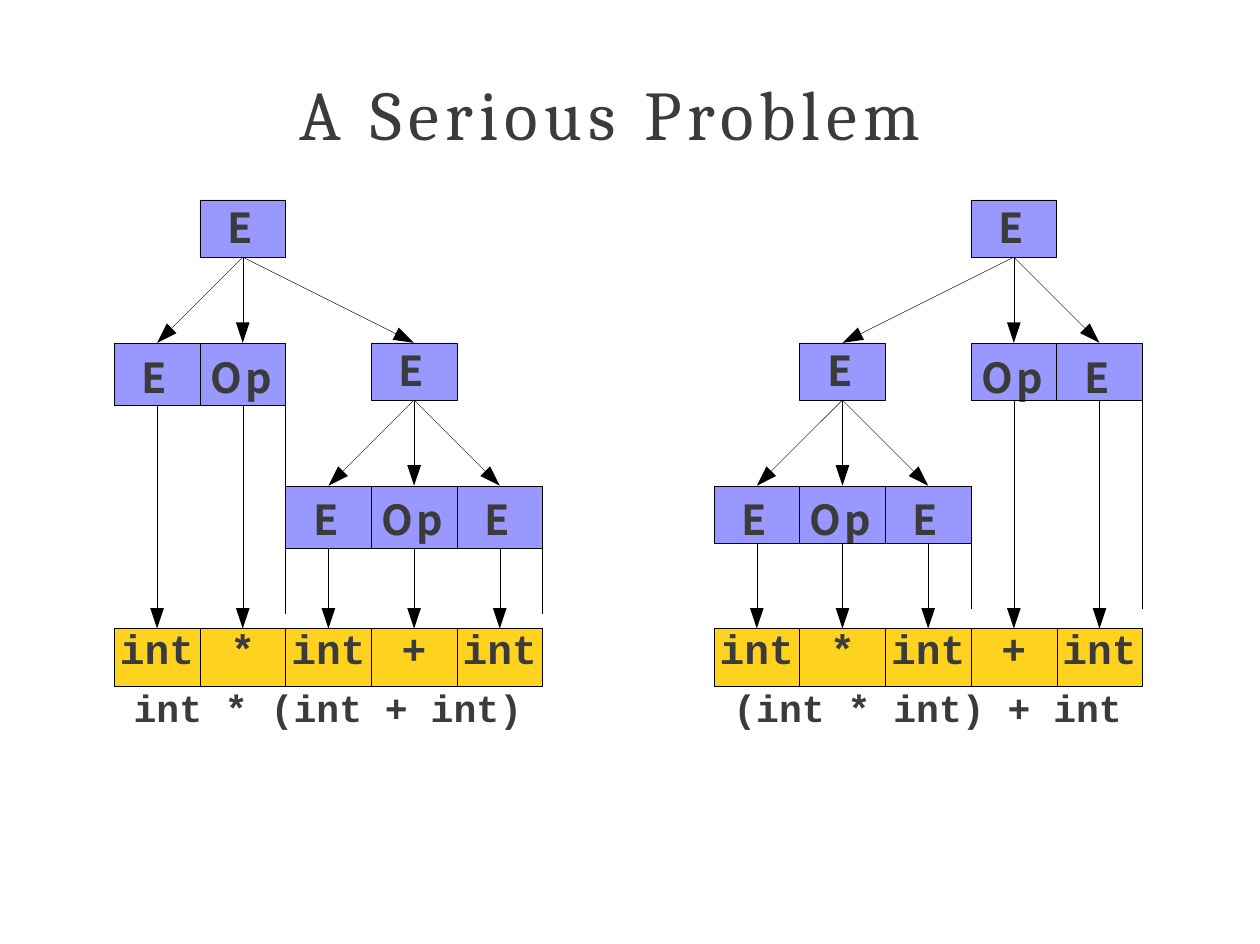
from math import hypot

from lxml.etree import SubElement
from pptx import Presentation
from pptx.dml.color import RGBColor
from pptx.enum.shapes import MSO_CONNECTOR, MSO_SHAPE
from pptx.enum.text import MSO_ANCHOR, MSO_AUTO_SIZE, PP_ALIGN
from pptx.oxml import parse_xml
from pptx.oxml.ns import nsdecls, qn
from pptx.util import Inches, Pt

TITLE = [("A ", 4.3), ("Serious ", 4), ("Problem", 3.7)]
TREES = [
    {
        "left": 1,
        "tokens": ["int", "*", "int", "+", "int"],
        "expression": "int * (int + int)",
        "nodes": [(1, 0, [0, 1, 3]), (3, 1, [2, 3, 4])],
        "groups": [(0, 1, ["E", "Op"]), (2, 2, ["E", "Op", "E"])],
    },
    {
        "left": 6.25,
        "tokens": ["int", "*", "int", "+", "int"],
        "expression": "(int * int) + int",
        "nodes": [(3, 0, [1, 3, 4]), (1, 1, [0, 1, 2])],
        "groups": [(3, 1, ["Op", "E"]), (0, 2, ["E", "Op", "E"])],
    },
]

CELL_W, CELL_H = 0.75, 0.5
TOP, LEVEL_STEP, TOKEN_LEVEL = 1.75, 1.25, 3
HEAD_LEN, HEAD_HALF, STEM_GAP = 0.18, 0.06, 0.17
BLUE, YELLOW, INK, BLACK = "9898FF", "FFD21F", "3B3B3B", "000000"
LINE_W = 0.25
INDENTS = {"E": 0.24, "Op": 0.09, "int": 0.05}
PLAIN_TABLE = "{2D5ABB26-0587-4C30-8999-92F81FD0307C}"

TITLE_FONT = {"name": "Cambria", "size": Pt(44), "bold": False}
NODE_FONT = {"name": "Noto Sans CJK KR", "size": Pt(26), "bold": True}
TOKEN_FONT = {"name": "Courier New", "size": Pt(26), "bold": True}
EXPRESSION_FONT = {"name": "Courier New", "size": Pt(24), "bold": True}


def color(fmt, value):
    fmt.rgb = RGBColor.from_string(value)


def paint(fill, value):
    fill.solid()
    color(fill.fore_color, value)


def write(tf, runs, font, indent=0, line=None):
    p = tf.paragraphs[0]
    p.alignment = PP_ALIGN.LEFT if indent else PP_ALIGN.CENTER
    p._p.get_or_add_pPr().set("marL", str(Inches(indent)))
    if line:
        p.line_spacing = Pt(line)
    for text, spacing in runs:
        r = p.add_run()
        r.text = text
        for key, value in font.items():
            setattr(r.font, key, value)
        color(r.font.color, INK)
        r.font._element.set("spc", str(round(spacing * 100)))


def inset(target, top):
    margins = {"margin_left": 0, "margin_right": 0, "margin_top": Inches(top),
               "margin_bottom": 0, "vertical_anchor": MSO_ANCHOR.TOP}
    for key, value in margins.items():
        setattr(target, key, value)


def add_text(s, runs, font, x, y, w, h):
    tf = s.shapes.add_textbox(Inches(x), Inches(y), Inches(w), Inches(h)).text_frame
    tf.word_wrap = True
    inset(tf, 0.01)
    write(tf, runs, font, 0.01)


def add_node(s, x, y):
    sp = s.shapes.add_shape(MSO_SHAPE.RECTANGLE, Inches(x), Inches(y),
                            Inches(CELL_W), Inches(CELL_H))
    sp.shadow.inherit = False
    paint(sp.fill, BLUE)
    color(sp.line.color, BLACK)
    sp.line.width = Pt(LINE_W)
    tf = sp.text_frame
    tf.word_wrap = True
    tf.auto_size = MSO_AUTO_SIZE.SHAPE_TO_FIT_TEXT
    inset(tf, 0.02)
    write(tf, [("E", 5.8)], NODE_FONT, INDENTS["E"])


def add_borders(cell, sides="LRTB"):
    tcPr = cell._tc.get_or_add_tcPr()
    for i, side in enumerate(sides):
        tcPr.insert(i, parse_xml(
            f'<a:ln{side} {nsdecls("a")} w="{Pt(LINE_W)}"><a:solidFill>'
            f'<a:srgbClr val="{BLACK}"/></a:solidFill></a:ln{side}>'))


def add_table(s, x, y, widths, heights):
    table = s.shapes.add_table(len(heights), len(widths), Inches(x), Inches(y),
                               Inches(sum(widths)), Inches(sum(heights))).table
    table.first_row = table.horz_banding = False
    table._tbl.tblPr.find(qn("a:tableStyleId")).text = PLAIN_TABLE
    for column, w in zip(table.columns, widths):
        column.width = Inches(w)
    for row, h in zip(table.rows, heights):
        row.height = Inches(h)
    return table


def fill_cell(cell, label, fill, font, top, line=None):
    inset(cell, top)
    paint(cell.fill, fill)
    add_borders(cell)
    spacing = 2.1 if label == "Op" else 0
    write(cell.text_frame, [(label, spacing)], font, INDENTS.get(label, 0), line)


def add_tokens(s, tokens, x, y):
    table = add_table(s, x, y, [CELL_W] * len(tokens), [CELL_H])
    for i, token in enumerate(tokens):
        fill_cell(table.cell(0, i), token, YELLOW, TOKEN_FONT, 0, 30.2)


def add_group(s, labels, x, y, token_y):
    last = 2 * len(labels) - 1
    table = add_table(s, x, y, [CELL_W / 2] * (last + 1),
                      [CELL_H, token_y - STEM_GAP - y - CELL_H])
    for i, label in enumerate(labels):
        cell = table.cell(0, 2 * i)
        cell.merge(table.cell(0, 2 * i + 1))
        fill_cell(cell, label, BLUE, NODE_FONT, 0.02)
    add_borders(table.cell(1, 0), "RT")
    add_borders(table.cell(1, last), "LT")
    for i in range(1, last, 2):
        table.cell(1, i).merge(table.cell(1, i + 1))
        add_borders(table.cell(1, i), "LR")


def add_head(s, x, y, ux, uy):
    bx, by = x - HEAD_LEN * ux, y - HEAD_LEN * uy
    dx, dy = -HEAD_HALF * uy, HEAD_HALF * ux
    corners = [(Inches(a), Inches(b)) for a, b in
               [(x, y), (bx + dx, by + dy), (bx - dx, by - dy)]]
    builder = s.shapes.build_freeform(*corners[0])
    builder.add_line_segments(corners[1:], close=True)
    sp = builder.convert_to_shape()
    sp.shadow.inherit = False
    paint(sp.fill, BLACK)
    sp.line.fill.background()


def add_arrow(s, x1, y1, x2, y2):
    length = hypot(x2 - x1, y2 - y1)
    ux, uy = (x2 - x1) / length, (y2 - y1) / length
    c = s.shapes.add_connector(MSO_CONNECTOR.STRAIGHT, Inches(x1), Inches(y1),
                               Inches(x2 - STEM_GAP * ux), Inches(y2 - STEM_GAP * uy))
    color(c.line.color, BLACK)
    c.line.width = Pt(LINE_W)
    SubElement(c._element.spPr, qn("a:effectLst"))
    add_head(s, x2, y2, ux, uy)


def add_tree(s, tree):
    def x(col):
        return tree["left"] + CELL_W * col

    def y(level):
        return TOP + LEVEL_STEP * level

    add_tokens(s, tree["tokens"], x(0), y(TOKEN_LEVEL))
    for col, level, labels in tree["groups"]:
        add_group(s, labels, x(col), y(level), y(TOKEN_LEVEL))
    for leaf in range(len(tree["tokens"])):
        add_head(s, x(leaf + 0.5), y(TOKEN_LEVEL), 0, 1)
    for col, level, children in tree["nodes"]:
        add_node(s, x(col), y(level))
        for child in children:
            add_arrow(s, x(col + 0.5), y(level) + CELL_H, x(child + 0.5), y(level + 1))
    add_text(s, [(tree["expression"], 0)], EXPRESSION_FONT,
             tree["left"] + 0.16, 5.98, 3.43, 0.43)


def main():
    prs = Presentation()
    prs.slide_width, prs.slide_height = Inches(11.03), Inches(8.26)
    s = prs.slides.add_slide(prs.slide_layouts[6])
    for tree in TREES:
        add_tree(s, tree)
    add_text(s, TITLE, TITLE_FONT, 2.61, 0.61, 5.79, 0.76)
    prs.save("out.pptx")


if __name__ == "__main__":
    main()
